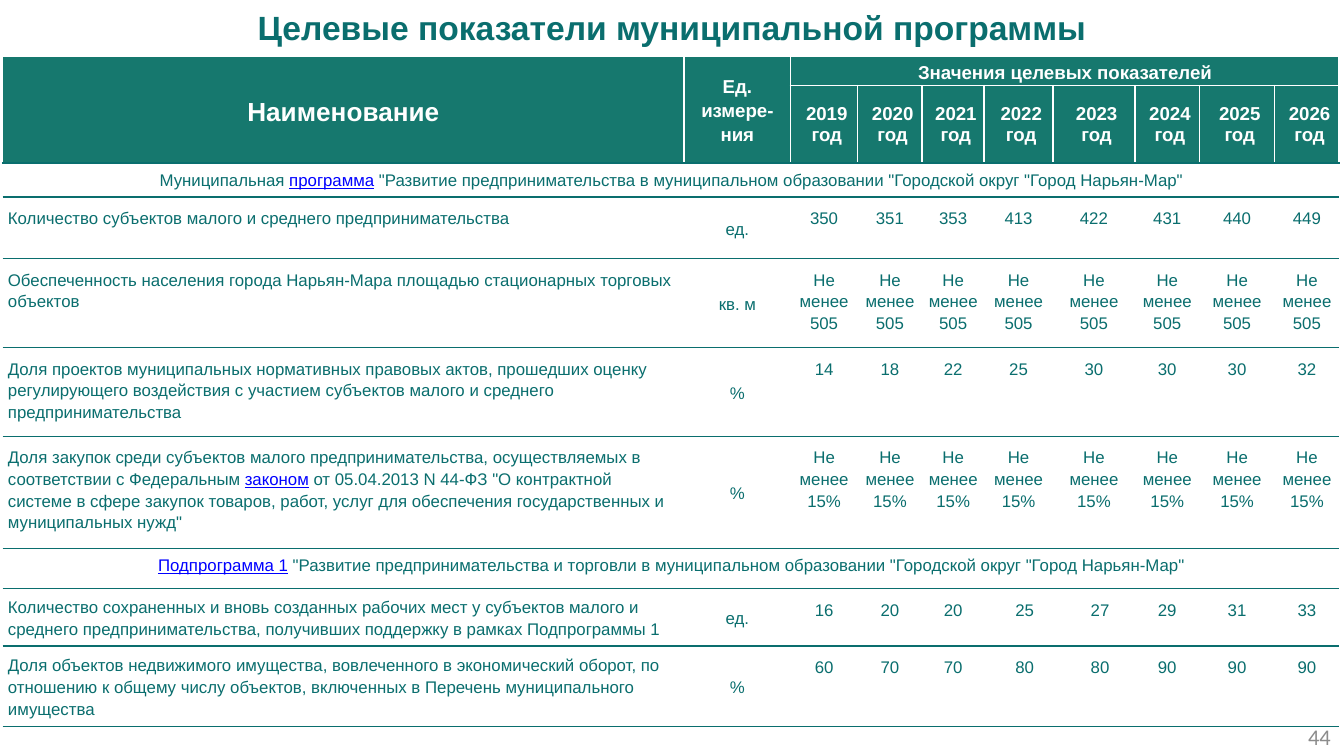
from lxml import etree
from pptx import Presentation
from pptx.dml.color import RGBColor
from pptx.enum import text
from pptx.oxml import ns
from pptx.util import Cm, Pt

TEAL = RGBColor(0x0A, 0x6E, 0x6E)
HEADER = RGBColor(0x16, 0x78, 0x6E)
WHITE = RGBColor(0xFF, 0xFF, 0xFF)
LINK = RGBColor(0x00, 0x00, 0xFF)
GREY = RGBColor(0x8C, 0x8C, 0x8C)

LEFT, CENTER, RIGHT = text.PP_ALIGN.LEFT, text.PP_ALIGN.CENTER, text.PP_ALIGN.RIGHT
TOP, MIDDLE = text.MSO_ANCHOR.TOP, text.MSO_ANCHOR.MIDDLE
NO_GRID = "{2D5ABB26-0587-4C30-8999-92F81FD0307C}"

COLS = [12.88, 2.01, 1.27, 1.22, 1.17, 1.3, 0.23, 1.32, 1.22, 1.42, 1.22]
ROWS = [0.51, 1.45, 0.64, 1.17, 1.68, 1.66, 2.11, 0.76, 1.09, 1.5]
YEARS = range(2019, 2027)

SECTIONS = {
    2: 'Муниципальная |программа| "Развитие предпринимательства в муниципальном '
       'образовании "Городской округ "Город Нарьян-Мар"',
    7: '|Подпрограмма 1| "Развитие предпринимательства и торговли в муниципальном '
       'образовании "Городской округ "Город Нарьян-Мар"',
}
INDICATORS = {
    3: ("Количество субъектов малого и среднего предпринимательства",
        "ед.", [350, 351, 353, 413, 422, 431, 440, 449]),
    4: ("Обеспеченность населения города Нарьян-Мара площадью стационарных "
        "торговых объектов", "кв. м", ["Не менее 505"] * 8),
    5: ("Доля проектов муниципальных нормативных правовых актов, прошедших оценку "
        "регулирующего воздействия с участием субъектов малого и среднего "
        "предпринимательства", "%", [14, 18, 22, 25, 30, 30, 30, 32]),
    6: ("Доля закупок среди субъектов малого предпринимательства, осуществляемых в "
        "соответствии с Федеральным |законом| от 05.04.2013 N 44-ФЗ \"О контрактной "
        "системе в сфере закупок товаров, работ, услуг для обеспечения "
        "государственных и муниципальных нужд\"", "%", ["Не менее 15%"] * 8),
    8: ("Количество сохраненных и вновь созданных рабочих мест у субъектов малого и "
        "среднего предпринимательства, получивших поддержку в рамках Подпрограммы 1",
        "ед.", [16, 20, 20, 25, 27, 29, 31, 33]),
    9: ("Доля объектов недвижимого имущества, вовлеченного в экономический оборот, "
        "по отношению к общему числу объектов, включенных в Перечень "
        "муниципального имущества", "%", [60, 70, 70, 80, 80, 90, 90, 90]),
}


def write(tf, content, size=9, color=TEAL, bold=False, font="Arial",
          align=CENTER, spacing=None, indent=0):
    tf.word_wrap = True
    p = tf.paragraphs[0]
    p.alignment = align
    if spacing:
        p.line_spacing = spacing
    if indent:
        pPr = p._p.get_or_add_pPr()
        pPr.set("marL", str(indent))
        pPr.set("indent", "0")
    for i, part in enumerate(content.split("|")):
        if part:
            r = p.add_run()
            r.text = part
            r.font.name = font
            r.font.size = Pt(size)
            r.font.bold = bold
            r.font.underline = i % 2 == 1
            r.font.color.rgb = LINK if i % 2 else color


def set_borders(cell, sides, color):
    tcPr = cell._tc.get_or_add_tcPr()
    for side in sides:
        ln = etree.SubElement(tcPr, ns.qn(f"a:ln{side}"), w=str(Pt(1)))
        fill = etree.SubElement(ln, ns.qn("a:solidFill"))
        etree.SubElement(fill, ns.qn("a:srgbClr"), val=str(color))


def fill_cell(cell, content, anchor=TOP, margins=(0.1, 0.1), **fmt):
    cell.margin_left = cell.margin_right = Cm(margins[0])
    cell.margin_top = cell.margin_bottom = Cm(margins[1])
    cell.vertical_anchor = anchor
    write(cell.text_frame, content, **fmt)


def header_cell(cell, content, sides="LRT", size=10, **fmt):
    set_borders(cell, sides, WHITE)
    cell.fill.solid()
    cell.fill.fore_color.rgb = HEADER
    fill_cell(cell, content, anchor=MIDDLE, size=size, color=WHITE, bold=True, **fmt)


def value_columns(wide):
    return [c for c in range(2, len(COLS)) if c != wide + 1]


def add_header(table):
    for c in (0, 1):
        table.cell(0, c).merge(table.cell(1, c))
    table.cell(0, 2).merge(table.cell(0, len(COLS) - 1))
    table.cell(1, 6).merge(table.cell(1, 7))
    header_cell(table.cell(0, 0), "Наименование", size=14, margins=(0, 0.03), spacing=1.15)
    header_cell(table.cell(0, 1), "Ед. измере-ния", margins=(0.2, 0), spacing=1.15)
    header_cell(table.cell(0, 2), "Значения целевых показателей", sides="LRTB",
                margins=(0, 0.03), spacing=1.15)
    for c, year in zip(value_columns(6), YEARS):
        header_cell(table.cell(1, c), f"{year} год", margins=(0.1, 0), indent=Cm(0.1))


def add_indicator(table, row, name, unit, values):
    is_sub = row > 7
    wide = 5 if is_sub else 6
    table.cell(row, wide).merge(table.cell(row, wide + 1))
    fill_cell(table.cell(row, 0), name, anchor=MIDDLE if is_sub else TOP,
              margins=(0.1, 0.1 if is_sub else 0.18), align=LEFT, spacing=1.15)
    fill_cell(table.cell(row, 1), unit, anchor=MIDDLE, spacing=1.15)
    for c, value in zip(value_columns(wide), values):
        fill_cell(table.cell(row, c), str(value), margins=(0.1, 0.18), spacing=1.15)


def add_indicator_table(slide):
    frame = slide.shapes.add_table(len(ROWS), len(COLS), Cm(0.05), Cm(1.07),
                                   Cm(sum(COLS)), Cm(sum(ROWS)))
    table = frame.table
    table.first_row = table.horz_banding = False
    table._tbl.tblPr.find(ns.qn("a:tableStyleId")).text = NO_GRID
    for col, width in zip(table.columns, COLS):
        col.width = Cm(width)
    for row, height in zip(table.rows, ROWS):
        row.height = Cm(height)
    add_header(table)
    for row in range(2, len(ROWS)):
        for c in range(len(COLS)):
            set_borders(table.cell(row, c), "TB", TEAL)
            table.cell(row, c).fill.background()
    for row, content in SECTIONS.items():
        table.cell(row, 0).merge(table.cell(row, len(COLS) - 1))
        fill_cell(table.cell(row, 0), content, spacing=1.15)
    for row, indicator in INDICATORS.items():
        add_indicator(table, row, *indicator)


def add_title(slide, content):
    sp = slide.shapes.title
    sp.left, sp.top, sp.width, sp.height = Cm(0), Cm(0), Cm(25.4), Cm(1.02)
    tf = sp.text_frame
    tf.vertical_anchor = TOP
    tf.auto_size = text.MSO_AUTO_SIZE.SHAPE_TO_FIT_TEXT
    write(tf, content, size=18, bold=True)


def add_page_number(slide, number):
    sp = slide.shapes.add_textbox(Cm(19.48), Cm(13.54), Cm(5.92), Cm(0.76))
    sp.text_frame.vertical_anchor = MIDDLE
    write(sp.text_frame, number, size=12, color=GREY, font="Calibri", align=RIGHT)


def main():
    prs = Presentation()
    prs.slide_width, prs.slide_height = Cm(25.4), Cm(14.29)
    slide = prs.slides.add_slide(prs.slide_layouts[5])
    add_page_number(slide, "44")
    add_title(slide, "Целевые показатели муниципальной программы")
    add_indicator_table(slide)
    prs.save("out.pptx")


if __name__ == "__main__":
    main()
